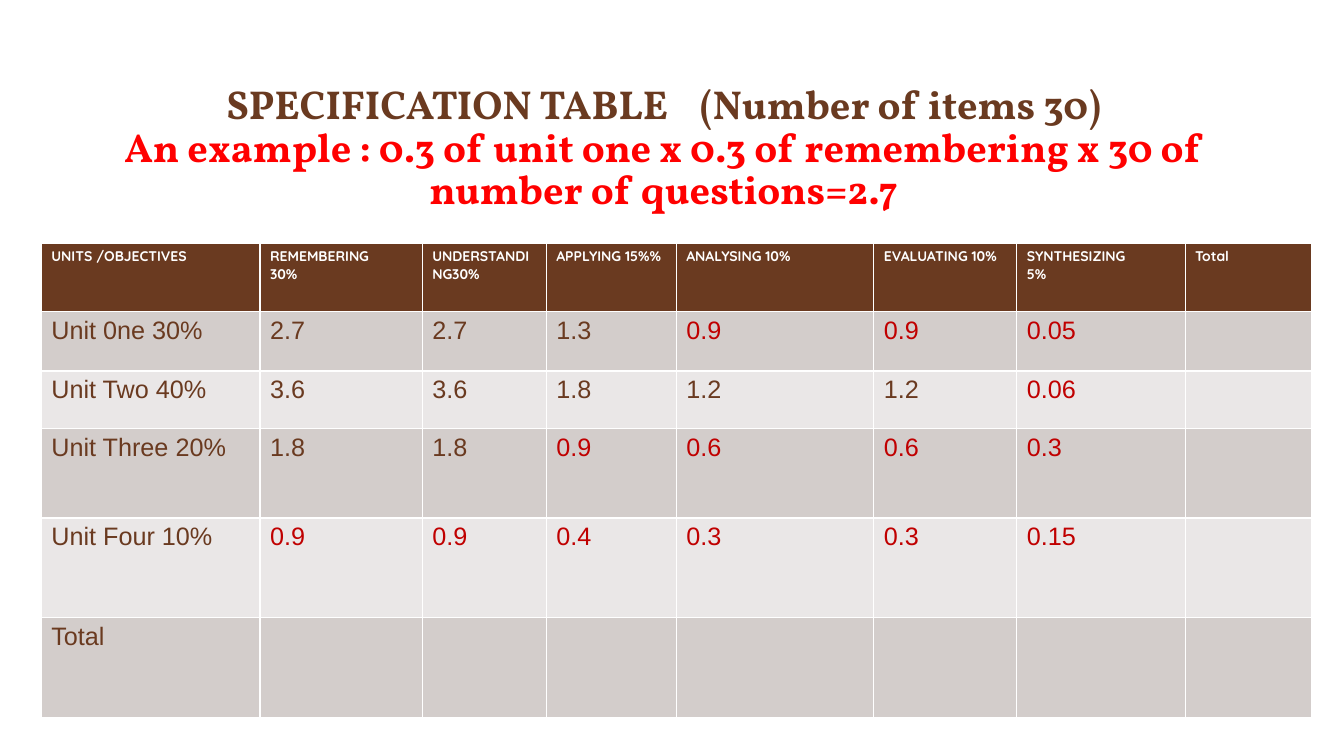
from pptx import Presentation
from pptx.dml.color import RGBColor
from pptx.enum.text import MSO_ANCHOR, MSO_AUTO_SIZE, PP_ALIGN
from pptx.util import Pt

BROWN = RGBColor(0x6A, 0x3A, 0x20)
RED = RGBColor(0xFF, 0x00, 0x00)
CRIMSON = RGBColor(0xC0, 0x00, 0x00)
WHITE = RGBColor(0xFF, 0xFF, 0xFF)
DARK = RGBColor(0xD3, 0xCD, 0xCB)
LIGHT = RGBColor(0xEA, 0xE7, 0xE7)

TITLE = {"name": "Vollkorn", "size": Pt(28.8), "bold": True}
HEAD = {"name": "Quicksand", "size": Pt(10), "bold": True}
BODY = {"name": "Arial", "size": Pt(18), "bold": False}

WIDTHS = [156.2, 115.9, 88.6, 92.9, 141.1, 102.2, 120.2, 90]
HEIGHTS = [49, 42.5, 41, 64.1, 71.3, 71.3]
ROWS = [
    ["UNITS /OBJECTIVES", "REMEMBERING\n30%", "UNDERSTANDING30%", "APPLYING 15%%",
     "ANALYSING 10%", "EVALUATING 10%", "SYNTHESIZING\n5%", "Total"],
    ["Unit 0ne 30%", "2.7", "2.7", "1.3", "0.9", "0.9", "0.05", ""],
    ["Unit Two 40%", "3.6", "3.6", "1.8", "1.2", "1.2", "0.06", ""],
    ["Unit Three 20%", "1.8", "1.8", "0.9", "0.6", "0.6", "0.3", ""],
    ["Unit Four 10%", "0.9", "0.9", "0.4", "0.3", "0.3", "0.15", ""],
    ["Total", "", "", "", "", "", "", ""],
]


def style(font, form, color):
    for key, value in form.items():
        setattr(font, key, value)
    font.color.rgb = color


def add_title(slide, left, top, width, height):
    title = slide.shapes.title
    box = {"left": left, "top": top, "width": width, "height": height}
    for key, value in box.items():
        setattr(title, key, Pt(value))
    frame = title.text_frame
    frame.auto_size = MSO_AUTO_SIZE.NONE
    frame.vertical_anchor = MSO_ANCHOR.BOTTOM
    para = frame.paragraphs[0]
    para.alignment = PP_ALIGN.CENTER
    para.line_spacing = 0.87

    def write(text, color):
        run = para.add_run()
        run.text = text
        style(run.font, TITLE, color)
        return run

    write("SPECIFICATION TABLE", BROWN)
    gap = write(" ", BROWN)
    gap.font._element.set("spc", "1700")
    write("(Number of items 30)", BROWN)
    para.add_line_break()
    write("An example : 0.3 of unit one x 0.3 of remembering x 30 of "
          "number of questions=2.7", RED)


def pick(row, col, text):
    """Text colour: shares below one whole item stand out."""
    if row == 0:
        return WHITE
    return CRIMSON if col and text and float(text) < 1 else BROWN


def add_grid(slide, left, top):
    frame = slide.shapes.add_table(len(ROWS), len(WIDTHS), Pt(left), Pt(top),
                                   Pt(sum(WIDTHS)), Pt(sum(HEIGHTS)))
    table = frame.table
    for column, width in zip(table.columns, WIDTHS):
        column.width = Pt(width)
    for r, (line, height) in enumerate(zip(ROWS, HEIGHTS)):
        table.rows[r].height = Pt(height)
        fill = BROWN if r == 0 else DARK if r % 2 else LIGHT
        for c, text in enumerate(line):
            cell = table.cell(r, c)
            cell.fill.solid()
            cell.fill.fore_color.rgb = fill
            cell.text = text
            for para in cell.text_frame.paragraphs:
                for run in para.runs:
                    style(run.font, BODY if r else HEAD, pick(r, c, text))


def main():
    deck = Presentation()
    deck.slide_width, deck.slide_height = Pt(960), Pt(540)
    slide = deck.slides.add_slide(deck.slide_layouts[5])
    add_title(slide, 24.5, 33.8, 899.3, 121.7)
    add_grid(slide, 29.5, 173.5)
    deck.save("out.pptx")


if __name__ == "__main__":
    main()
